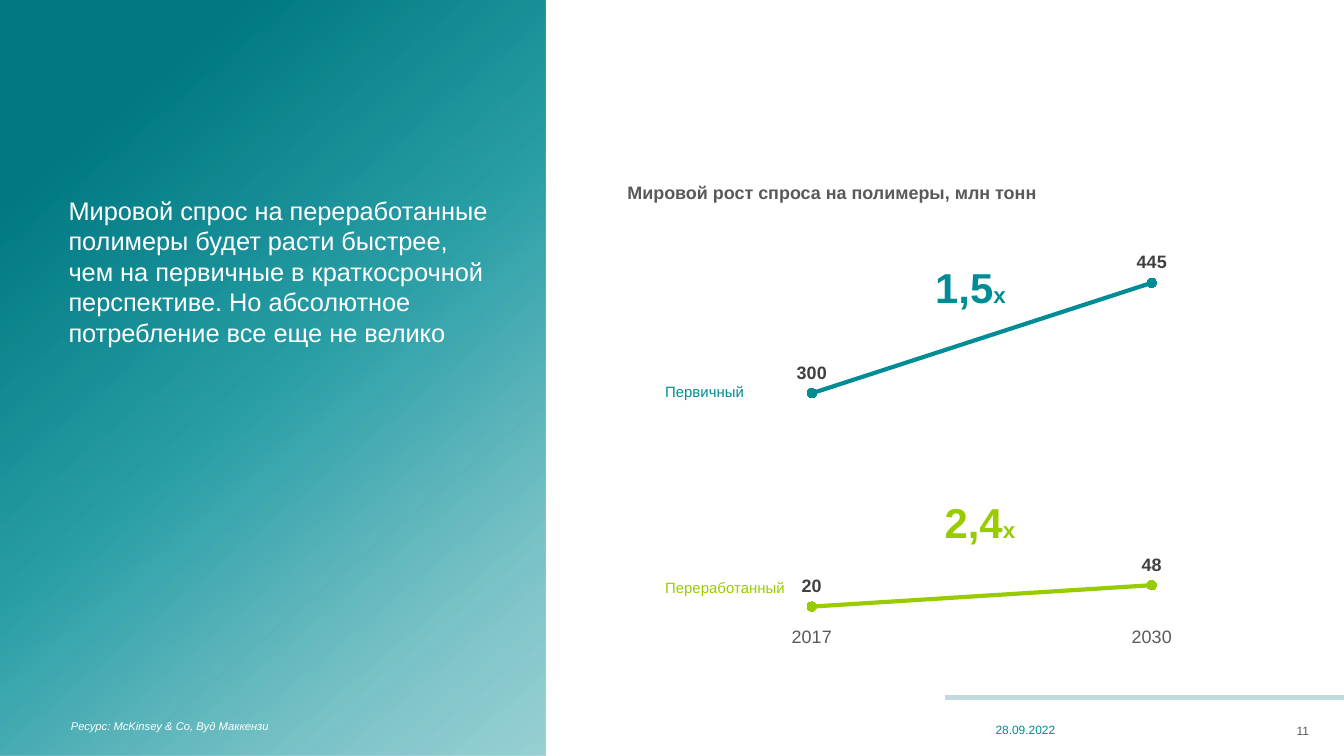
from lxml import etree
from pptx import Presentation
from pptx.chart.data import CategoryChartData
from pptx.dml.color import RGBColor
from pptx.enum.chart import XL_CHART_TYPE, XL_LABEL_POSITION, XL_MARKER_STYLE, XL_TICK_MARK
from pptx.enum.shapes import MSO_CONNECTOR, MSO_SHAPE
from pptx.enum.text import MSO_ANCHOR, MSO_AUTO_SIZE, PP_ALIGN
from pptx.oxml import parse_xml
from pptx.oxml.ns import nsdecls, qn
from pptx.util import Inches, Pt

FONT = "Arial"
TEAL, LIME, GREY, WHITE = "008C95", "99CC00", "595959", "FFFFFF"


def color(code):
    return RGBColor.from_string(code)


def style(font, size, code, bold=False, italic=False):
    font.name = FONT
    font.size = Pt(size)
    font.color.rgb = color(code)
    font.bold = bold
    font.italic = italic


def place(shape, box):
    shape.left, shape.top, shape.width, shape.height = map(Inches, box)


def strip(frame):
    frame.margin_left = frame.margin_right = 0
    frame.margin_top = frame.margin_bottom = 0


def label(slide, box, text, size, code, bold=False, italic=False):
    frame = slide.shapes.add_textbox(*map(Inches, box)).text_frame
    frame.word_wrap = True
    frame.auto_size = MSO_AUTO_SIZE.SHAPE_TO_FIT_TEXT
    frame.text = text
    style(frame.paragraphs[0].runs[0].font, size, code, bold, italic)
    return frame


def factor(slide, box, value, code):
    frame = label(slide, box, value, 22.4, code, bold=True)
    frame.word_wrap = False
    run = frame.paragraphs[0].add_run()
    run.text = "х"
    style(run.font, 12, code, bold=True)


def blend(shape, stops, angle):
    marks = "".join(
        f'<a:gs pos="{pos * 1000}"><a:srgbClr val="{code}">'
        f'<a:alpha val="{alpha * 1000}"/></a:srgbClr></a:gs>'
        for pos, code, alpha in stops)
    fill = parse_xml(
        f'<a:gradFill {nsdecls("a")} rotWithShape="1"><a:gsLst>{marks}</a:gsLst>'
        f'<a:lin ang="{angle * 60000}" scaled="0"/></a:gradFill>')
    shape.fill.background()
    props = shape.fill._xPr
    props.replace(props.find(qn("a:noFill")), fill)


def panel(slide, box):
    left, top, width, height = box
    back = slide.shapes.add_shape(MSO_SHAPE.RECTANGLE, *map(Inches, box))
    back.shadow.inherit = False
    back.line.fill.background()
    blend(back, [(17, "007982", 100), (51, TEAL, 83), (82, TEAL, 52), (100, TEAL, 40)], 50)
    slide.shapes._spTree.insert(2, back._element)

    title = slide.shapes.title
    place(title, (left + 0.51, top + 1.45, 3.12, 2.8))
    frame = title.text_frame
    frame.text = ("Мировой спрос на переработанные полимеры будет расти быстрее, "
                  "чем на первичные в краткосрочной перспективе. "
                  "Но абсолютное потребление все еще не велико")
    frame.word_wrap = True
    frame.vertical_anchor = MSO_ANCHOR.TOP
    strip(frame)
    para = frame.paragraphs[0]
    para.alignment = PP_ALIGN.LEFT
    para.line_spacing = 1.0
    style(para.runs[0].font, 13.6, WHITE)
    label(slide, (left + 0.43, top + 5.3, 6.67, 0.23),
          "Ресурс: McKinsey & Co, Вуд Маккензи", 6, WHITE, italic=True)


def fix_plot(chart, x, y, width, height):
    area = chart._chartSpace.chart.plotArea
    for old in area.findall(qn("c:layout")):
        area.remove(old)
    layout = etree.Element(qn("c:layout"))
    manual = etree.SubElement(layout, qn("c:manualLayout"))
    pairs = [("layoutTarget", "inner"), ("xMode", "edge"), ("yMode", "edge"),
             ("x", x), ("y", y), ("w", width), ("h", height)]
    for tag, val in pairs:
        etree.SubElement(manual, qn(f"c:{tag}")).set("val", str(val))
    area.insert(0, layout)


def growth(slide, box):
    data = CategoryChartData()
    data.categories = ["2017", "2030"]
    data.add_series("Series 1", (300, 445))
    data.add_series("Series 2", (20, 48))
    chart = slide.shapes.add_chart(XL_CHART_TYPE.LINE_MARKERS, *map(Inches, box), data).chart
    style(chart.font, 10, "000000")
    chart.has_title = False
    chart.has_legend = False
    fix_plot(chart, 0.02, 0.02, 0.96, 0.9)

    scale = chart.value_axis
    scale.minimum_scale, scale.maximum_scale = 0, 500
    scale.has_major_gridlines = False
    scale.visible = False
    years = chart.category_axis
    years.major_tick_mark = XL_TICK_MARK.NONE
    years.minor_tick_mark = XL_TICK_MARK.NONE
    years.format.line.fill.background()
    style(years.tick_labels.font, 9.6, GREY)

    chart.plots[0].vary_by_categories = False
    for series, code in zip(chart.plots[0].series, (TEAL, LIME)):
        series.smooth = False
        series.format.line.color.rgb = color(code)
        series.format.line.width = Pt(2.25)
        marker = series.marker
        marker.style, marker.size = XL_MARKER_STYLE.CIRCLE, 5
        marker.format.fill.solid()
        marker.format.fill.fore_color.rgb = color(code)
        marker.format.line.color.rgb = color(code)
        tags = series.data_labels
        tags.show_value = True
        tags.position = XL_LABEL_POSITION.ABOVE
        style(tags.font, 9.6, "404040", bold=True)


def demand(slide, box):
    left, top, width, height = box
    growth(slide, (left + 0.1, top + 0.43, width - 0.1, height - 0.43))
    factor(slide, (left + 2.36, top + 2.35, 0.89, 0.57), "2,4", LIME)
    factor(slide, (left + 2.29, top + 0.6, 0.89, 0.57), "1,5", TEAL)
    label(slide, (left, top, 5, 0.3),
          "Мировой рост спроса на полимеры, млн тонн", 9.6, GREY, bold=True)
    label(slide, (left + 0.28, top + 1.5, 1.41, 0.24), "Первичный", 8, TEAL)
    label(slide, (left + 0.28, top + 2.96, 1.41, 0.27), "Переработанный", 8, LIME)


def footer(slide, box):
    left, top, width, height = box
    rule = slide.shapes.add_connector(
        MSO_CONNECTOR.STRAIGHT, Inches(left), Inches(top), Inches(left + width), Inches(top))
    rule.line.color.rgb = color("C0DADE")
    rule.line.width = Pt(2.75)
    etree.SubElement(rule._element.spPr, qn("a:effectLst"))
    notes = [(-0.2, 1.02, 0.18, "28.09.2022", TEAL), (2.39, 0.32, 0.19, "11", GREY)]
    for shift, wide, tall, text, code in notes:
        frame = label(slide, (left + shift, top + 0.11, wide, tall), text, 6.4, code)
        frame.auto_size = MSO_AUTO_SIZE.NONE
        strip(frame)
        frame.vertical_anchor = MSO_ANCHOR.BOTTOM
        frame.paragraphs[0].alignment = PP_ALIGN.RIGHT


def main():
    deck = Presentation()
    deck.slide_width = Inches(10)
    deck.slide_height = deck.slide_width * 9 // 16
    slide = deck.slides.add_slide(deck.slide_layouts[5])
    panel(slide, (0, 0, 4.06, 5.62))
    demand(slide, (4.57, 1.3, 5.37, 3.58))
    footer(slide, (7.03, 5.19, 2.97, 0.43))
    deck.save("out.pptx")


if __name__ == "__main__":
    main()
